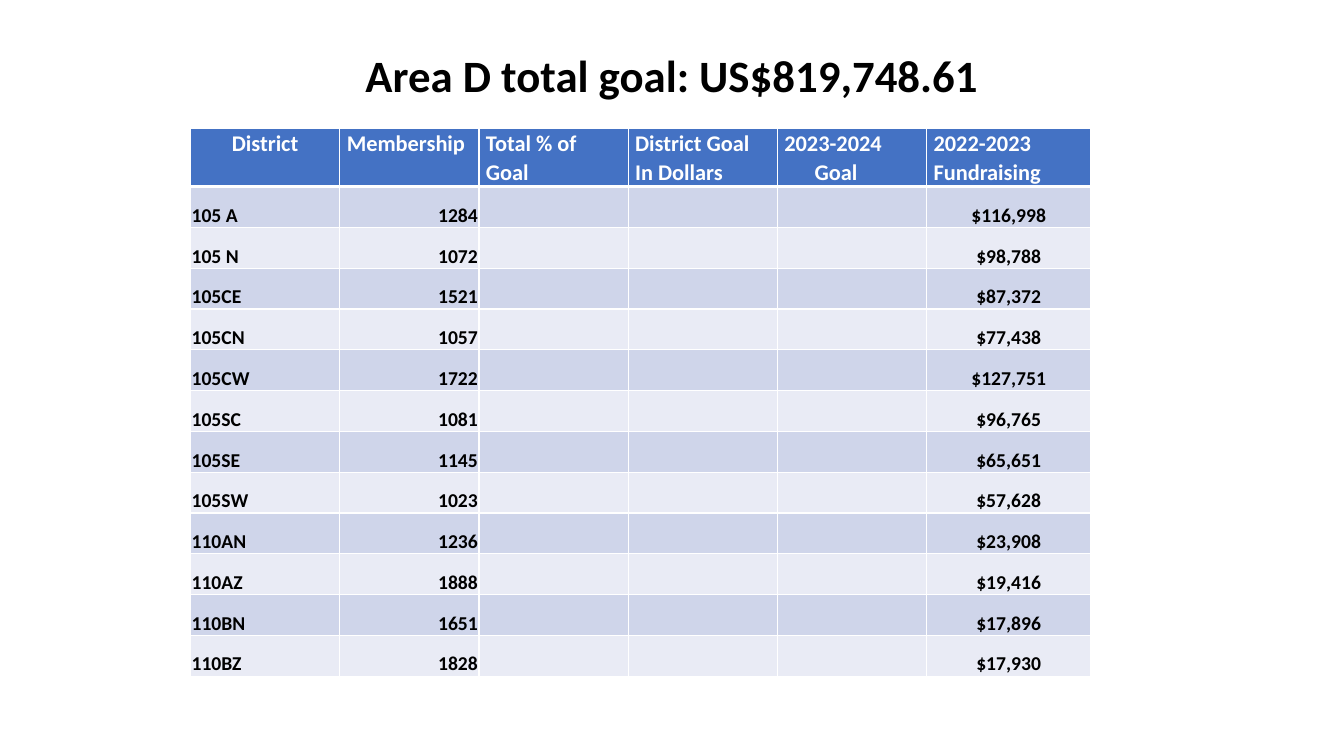
from dataclasses import dataclass

from lxml.etree import SubElement as Sub
from pptx import Presentation
from pptx.dml.color import RGBColor as RGB
from pptx.enum.text import MSO_ANCHOR as Anchor, PP_ALIGN as Align
from pptx.oxml.ns import qn
from pptx.util import Inches, Pt

WHITE, BLACK, BLUE = "FFFFFF", "000000", "4472C4"
BANDS = ("CFD5EA", "E9EBF5")


@dataclass
class Column:
    head: str
    width: float
    align: Align = Align.LEFT
    first: Align = Align.LEFT


@dataclass
class District:
    name: str
    members: int
    raised: int

    def texts(self) -> list[str]:
        return [self.name, str(self.members), "", "", "", f"${self.raised:,}"]


COLUMNS = [
    Column("District", 1.48, first=Align.CENTER),
    Column("Membership", 1.38, Align.RIGHT),
    Column("Total % of Goal", 1.48),
    Column("District Goal In Dollars", 1.48),
    Column("2023-2024\nGoal", 1.48),
    Column("2022-2023\nFundraising", 1.63, Align.CENTER),
]
DISTRICTS = [
    District("105 A", 1284, 116998),
    District("105 N", 1072, 98788),
    District("105CE", 1521, 87372),
    District("105CN", 1057, 77438),
    District("105CW", 1722, 127751),
    District("105SC", 1081, 96765),
    District("105SE", 1145, 65651),
    District("105SW", 1023, 57628),
    District("110AN", 1236, 23908),
    District("110AZ", 1888, 19416),
    District("110BN", 1651, 17896),
    District("110BZ", 1828, 17930),
]
HEAD_HIGH, BODY_HIGH = 0.56, 4.86
HEAD = {"margin_left": Inches(0.07), "margin_right": Inches(0.07),
        "margin_top": 0, "margin_bottom": 0, "vertical_anchor": Anchor.TOP}
BODY = {"margin_left": Inches(0.01), "margin_right": Inches(0.01),
        "margin_top": Inches(0.01), "margin_bottom": 0,
        "vertical_anchor": Anchor.BOTTOM}


def color(value: str) -> RGB:
    return RGB.from_string(value)


def apply(target, values: dict) -> None:
    for name, value in values.items():
        setattr(target, name, value)


def style(para, size: int, ink: str, **values) -> None:
    apply(para, values)
    for font in [para.font] + [run.font for run in para.runs]:
        apply(font, {"name": "Calibri", "size": Pt(size), "bold": True})
        font.color.rgb = color(ink)


def border(cell, top: int, bottom: int) -> None:
    props = cell._tc.get_or_add_tcPr()
    for side, width in zip("LRTB", (1, 1, top, bottom)):
        line = Sub(props, qn(f"a:ln{side}"), w=str(Pt(width)))
        Sub(Sub(line, qn("a:solidFill")), qn("a:srgbClr"), val=WHITE)


def paint(cell, text: str, fill: str, form: dict, top: int, bottom: int) -> None:
    border(cell, top, bottom)
    cell.fill.solid()
    cell.fill.fore_color.rgb = color(fill)
    apply(cell, form)
    cell.text = text


def add_title(slide) -> None:
    box = slide.shapes.add_textbox(Inches(3.33), Inches(0.39), Inches(6.67), Inches(0.65))
    frame = box.text_frame
    frame.word_wrap = True
    frame.text = "Area D total goal: US$819,748.61"
    style(frame.paragraphs[0], 32, BLACK, alignment=Align.CENTER,
          line_spacing=1.07, space_after=Pt(8))


def add_goals(slide) -> None:
    table = slide.shapes.add_table(
        len(DISTRICTS) + 1, len(COLUMNS), Inches(1.89), Inches(1.27),
        Inches(sum(col.width for col in COLUMNS)), Inches(HEAD_HIGH + BODY_HIGH)).table
    apply(table, {"first_row": False, "horz_banding": False})
    table.rows[0].height = Inches(HEAD_HIGH)

    # Header row
    for j, col in enumerate(COLUMNS):
        table.columns[j].width = Inches(col.width)
        cell = table.cell(0, j)
        paint(cell, col.head, BLUE, HEAD, 1, 3)
        for para in cell.text_frame.paragraphs:
            if para.text == "Goal":
                para._p.get_or_add_pPr().set("marL", str(Inches(0.3)))
            style(para, 16, WHITE, alignment=col.first, line_spacing=1.07)

    # District rows
    for i, district in enumerate(DISTRICTS, 1):
        table.rows[i].height = Inches(BODY_HIGH / len(DISTRICTS))
        for j, text in enumerate(district.texts()):
            cell = table.cell(i, j)
            paint(cell, text, BANDS[(i - 1) % 2], BODY, 3 if i == 1 else 1, 1)
            style(cell.text_frame.paragraphs[0], 14, BLACK, alignment=COLUMNS[j].align)


def main() -> None:
    deck = Presentation()
    apply(deck, {"slide_width": Inches(13.33), "slide_height": Inches(7.5)})
    slide = deck.slides.add_slide(deck.slide_layouts[6])
    add_goals(slide)
    add_title(slide)
    deck.save("out.pptx")


if __name__ == "__main__":
    main()
